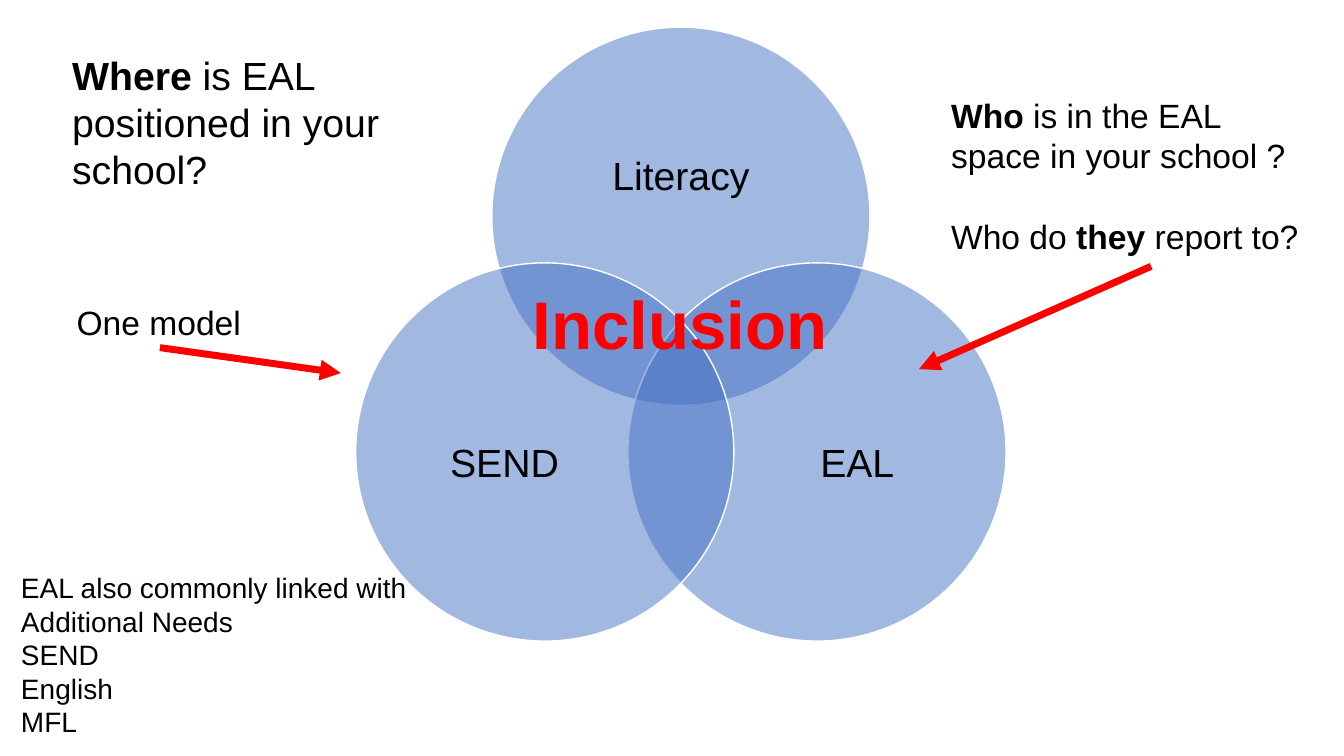
from dataclasses import dataclass

from lxml.etree import SubElement
from pptx import Presentation
from pptx.dml.color import RGBColor
from pptx.enum.shapes import MSO_CONNECTOR, MSO_SHAPE
from pptx.enum.text import MSO_ANCHOR, MSO_AUTO_SIZE, PP_ALIGN
from pptx.oxml.ns import qn
from pptx.util import Cm, Pt


@dataclass(frozen=True)
class Theme:
    font: str = "Arial"
    text: RGBColor = RGBColor(0, 0, 0)
    accent: RGBColor = RGBColor(0xFF, 0, 0)
    circle: RGBColor = RGBColor(0x44, 0x72, 0xC4)
    paper: RGBColor = RGBColor(0xFF, 0xFF, 0xFF)
    hero: int = 48
    large: int = 28
    medium: int = 24
    small: int = 20


theme = Theme()


def add_run(p, text, size, bold=False, color=theme.text):
    r = p.add_run()
    r.text = text
    r.font.name = theme.font
    r.font.size = Pt(size)
    r.font.bold = bold
    r.font.color.rgb = color


def add_note(box, paragraphs, size, wrap=False, color=theme.text, gap=0):
    """Add a text box; each paragraph is a list of (text, bold) runs."""
    s = prs_slide.shapes.add_textbox(*map(Cm, box))
    tf = s.text_frame
    tf.word_wrap = wrap
    tf.auto_size = MSO_AUTO_SIZE.SHAPE_TO_FIT_TEXT
    for i, runs in enumerate(paragraphs):
        p = tf.paragraphs[0] if i == 0 else tf.add_paragraph()
        if i and gap:
            p.space_before = Pt(gap)
        for text, bold in runs:
            add_run(p, text, size, bold, color)
    return s


prs = Presentation()
prs.slide_width, prs.slide_height = Cm(33.87), Cm(19.05)
prs_slide = prs.slides.add_slide(prs.slide_layouts[6])

# Venn diagram: circle centre, then label box
diameter = 9.53
venn_x, upper_y, lower_y, spread = 17.16, 5.45, 11.39, 3.43
venn = [
    ("Literacy", venn_x, upper_y, (13.67, 2.34, 6.98, 4.29)),
    ("EAL", venn_x + spread, lower_y, (18.75, 9.09, 5.71, 5.23)),
    ("SEND", venn_x - spread, lower_y, (9.86, 9.09, 5.71, 5.23)),
]
for name, x, y, label_box in venn:
    s = prs_slide.shapes.add_shape(
        MSO_SHAPE.OVAL, Cm(x - diameter / 2), Cm(y - diameter / 2), Cm(diameter), Cm(diameter))
    s.shadow.inherit = False
    s.fill.solid()
    s.fill.fore_color.rgb = theme.circle
    s.line.color.rgb = theme.paper
    s.line.width = Pt(1)
    fill_color = s.fill._xPr.find(qn("a:solidFill"))[0]
    SubElement(fill_color, qn("a:alpha"), val="50000")

    label = prs_slide.shapes.add_textbox(*map(Cm, label_box))
    tf = label.text_frame
    tf.word_wrap = True
    tf.vertical_anchor = MSO_ANCHOR.MIDDLE
    tf.margin_left = tf.margin_right = tf.margin_top = tf.margin_bottom = 0
    p = tf.paragraphs[0]
    p.alignment = PP_ALIGN.CENTER
    p.line_spacing = 0.9
    add_run(p, name, theme.large)

# Heading and notes
add_note((13.18, 6.99, 8.03, 2.31), [[("Inclusion", True)]], theme.hero, color=theme.accent)
where = add_note(
    (1.57, 1.17, 8.99, 3.84),
    [[("Where", True), (" is EAL positioned in your school?", False)]],
    theme.large, wrap=True)
model = add_note((1.68, 7.49, 4.7, 1.27), [[("One model", False)]], theme.medium)
who = add_note(
    (23.72, 2.26, 9.47, 4.37),
    [[("Who", True), (" is in the EAL space in your school ?", False)],
     [("Who do ", False), ("they", True), (" report to?", False)]],
    theme.medium, wrap=True, gap=28.8)
for s in (where, who):
    s.fill.solid()
    s.fill.fore_color.rgb = theme.paper
links = ["EAL also commonly linked with", "Additional Needs", "SEND", "English", "MFL"]
add_note((0.28, 14.25, 10.31, 4.52), [[(link, False)] for link in links], theme.small)

# Arrows from the notes to the diagram
arrows = [
    ((29.01, 6.71), (23.16, 9.3), None),
    ((4.03, 8.76), (8.59, 9.4), model),
]
for start, end, source in arrows:
    arrow = prs_slide.shapes.add_connector(MSO_CONNECTOR.STRAIGHT, *map(Cm, start + end))
    if source is not None:
        arrow.begin_connect(source, 2)
    arrow.line.color.rgb = theme.accent
    arrow.line.width = Pt(5)
    SubElement(arrow.line._get_or_add_ln(), qn("a:tailEnd"), type="triangle")
    SubElement(arrow._element.spPr, qn("a:effectLst"))

prs.save("out.pptx")
